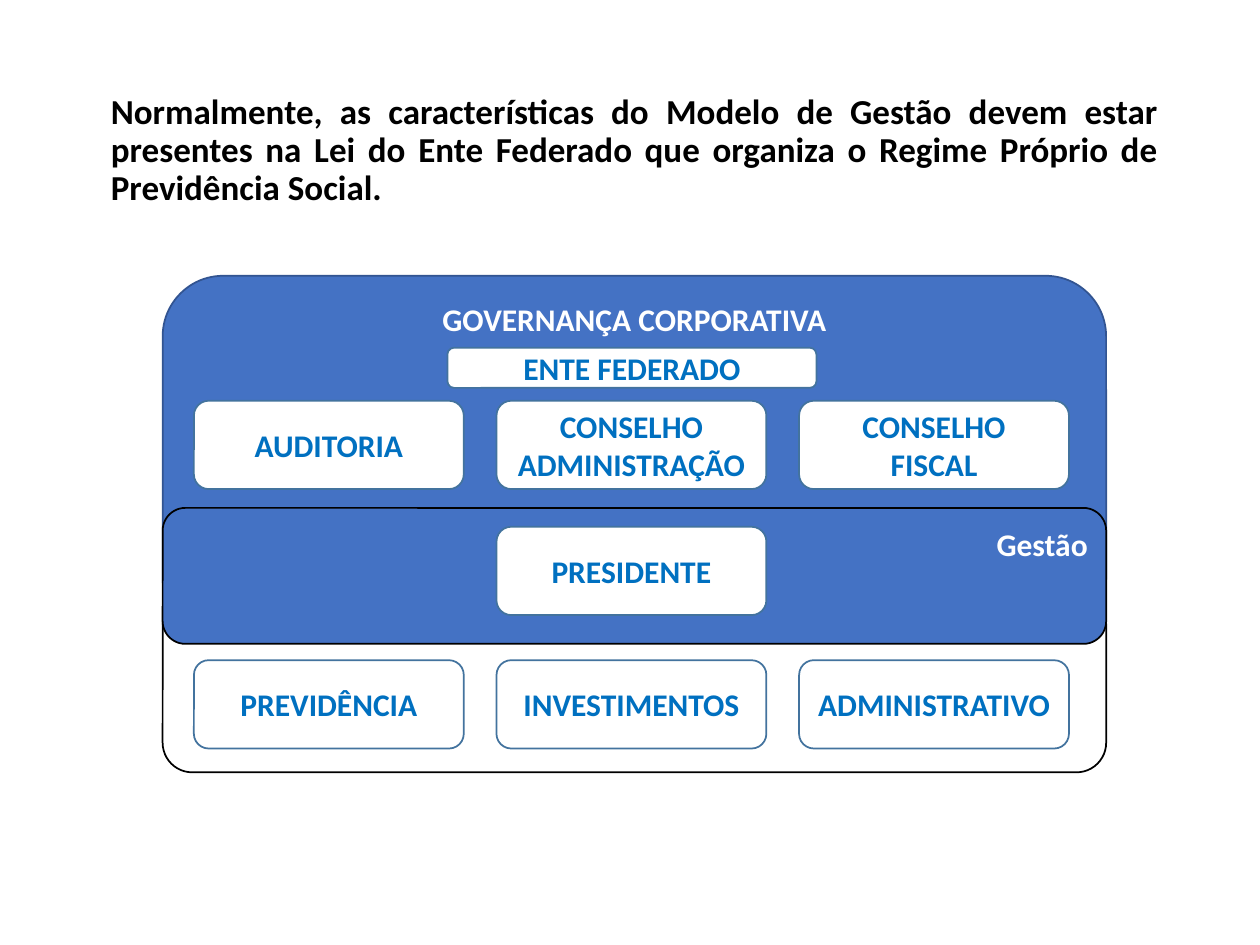
import pptx
import pptx.util
import pptx.dml.color
import pptx.enum.shapes
import pptx.enum.text

Cm = pptx.util.Cm
Pt = pptx.util.Pt
Align = pptx.enum.text.PP_ALIGN
Anchor = pptx.enum.text.MSO_ANCHOR


def paint(part, code):
    part.rgb = pptx.dml.color.RGBColor.from_string(code)


class Board:
    font = {"name": "Calibri", "size": Pt(18), "bold": True}
    white, black, blue, text, edge = "FFFFFF", "000000", "4472C4", "0070C0", "43739E"

    def __init__(self, slide):
        self.slide = slide

    def fill_in(self, frame, words, color, look, **extra):
        frame.word_wrap = True
        frame.text = words
        line = frame.paragraphs[0]
        for key, value in look.items():
            setattr(line, key, value)
        for key, value in {**self.font, **extra}.items():
            setattr(line.font, key, value)
        paint(line.font.color, color)

    def intro(self, words, *area):
        title = self.slide.shapes.title.element
        title.getparent().remove(title)
        body = self.slide.placeholders[1]
        body.left, body.top, body.width, body.height = map(Cm, area)
        body.text_frame.vertical_anchor = Anchor.TOP
        look = {"alignment": Align.JUSTIFY, "line_spacing": 0.9, "space_before": Pt(0)}
        self.fill_in(body.text_frame, words, self.black, look, size=Pt(20))

    def panel(self, area, fill, edge, words="", color="FFFFFF", anchor=Anchor.MIDDLE):
        kind = pptx.enum.shapes.MSO_SHAPE.ROUNDED_RECTANGLE
        shape = self.slide.shapes.add_shape(kind, *map(Cm, area))
        shape.shadow.inherit = False
        shape.fill.solid()
        paint(shape.fill.fore_color, fill)
        shape.line.width = Pt(1)
        paint(shape.line.color, edge)
        if words:
            shape.text_frame.vertical_anchor = anchor
            self.fill_in(shape.text_frame, words, color, {"alignment": Align.CENTER})

    def card(self, words, *area):
        self.panel(area, self.white, self.edge, words, self.text)

    def row(self, top, names):
        for col, name in names.items():
            self.card(name, 3.91 + 6.1 * col, top, 5.44, 1.78)

    def label(self, words, *area):
        box = self.slide.shapes.add_textbox(*map(Cm, area))
        self.fill_in(box.text_frame, words, self.white, {"alignment": Align.LEFT})


def main():
    deck = pptx.Presentation()
    deck.slide_width, deck.slide_height = Cm(25.4), Cm(19.05)
    board = Board(deck.slides.add_slide(deck.slide_layouts[0]))
    left, wide = 3.28, 19.02

    board.panel((left, 11.99, wide, 3.58), board.white, board.black)
    board.intro(
        "Normalmente, as características do Modelo de Gestão devem estar presentes "
        "na Lei do Ente Federado que organiza o Regime Próprio de Previdência Social.",
        1.98, 1.78, 21.62, 4.5)
    board.panel((left, 5.56, wide, 7.32), board.blue, "325491",
                "GOVERNANÇA CORPORATIVA", anchor=Anchor.TOP)
    board.card("ENTE FEDERADO", 9.02, 7.01, 7.44, 0.81)
    board.row(8.08, {0: "AUDITORIA", 1: "CONSELHO ADMINISTRAÇÃO", 2: "CONSELHO FISCAL"})
    board.panel((left, 10.24, wide, 2.74), board.blue, board.black)
    board.row(10.62, {1: "PRESIDENTE"})
    board.row(13.31, {0: "PREVIDÊNCIA", 1: "INVESTIMENTOS", 2: "ADMINISTRATIVO"})
    board.label("Gestão", 19.84, 10.46, 2.39, 1.02)
    deck.save("out.pptx")


if __name__ == "__main__":
    main()
